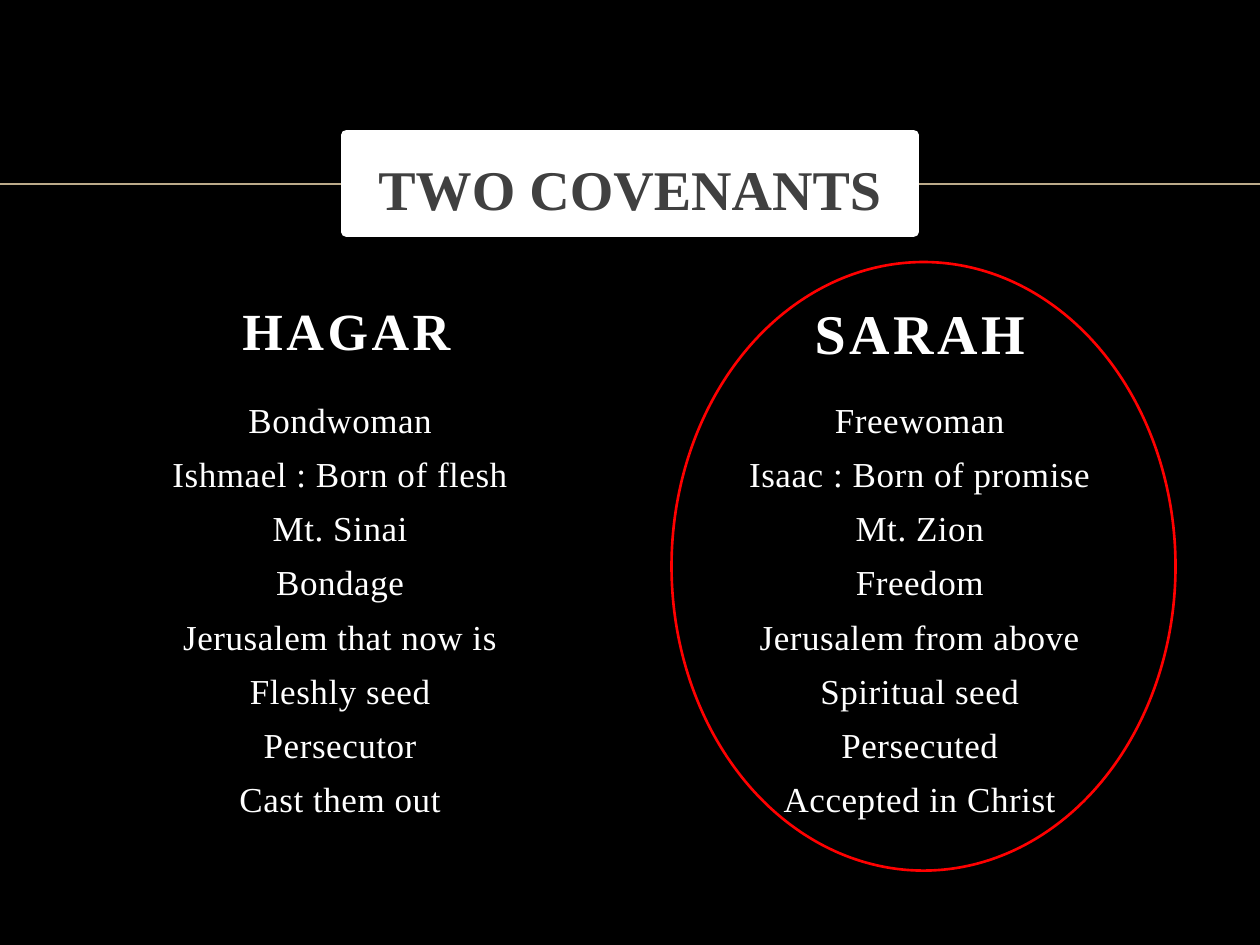
from pptx import Presentation
from pptx.dml.color import RGBColor
from pptx.enum.shapes import MSO_CONNECTOR as Conn, MSO_SHAPE as Shape
from pptx.enum.text import MSO_ANCHOR as Anchor, PP_ALIGN as Align
from pptx.oxml.ns import qn
from pptx.util import Inches, Pt
from lxml import etree

BLACK = RGBColor(0x00, 0x00, 0x00)
WHITE = RGBColor(0xFF, 0xFF, 0xFF)
GREY = RGBColor(0x40, 0x40, 0x40)
TAN = RGBColor(0xBB, 0xAA, 0x8A)
RED = RGBColor(0xFF, 0x00, 0x00)

HAGAR = ["Bondwoman", "Ishmael : Born of flesh", "Mt. Sinai", "Bondage",
         "Jerusalem that now is", "Fleshly seed", "Persecutor",
         "Cast them out"]
SARAH = ["Freewoman", "Isaac : Born of promise", "Mt. Zion", "Freedom",
         "Jerusalem from above", "Spiritual seed", "Persecuted",
         "Accepted in Christ"]


def write(frame, lines, size=20, color=WHITE, bold=False, track=0, gap=0,
          anchor=Anchor.TOP, inset=0.05):
    """Fill a frame with centred lines; track and gap are in points."""
    frame.word_wrap = True
    frame.vertical_anchor = anchor
    frame.margin_top = Inches(inset)
    for i, line in enumerate(lines):
        para = frame.paragraphs[0] if i == 0 else frame.add_paragraph()
        para.alignment = Align.CENTER
        if i:
            para.space_before = Pt(gap)
        run = para.add_run()
        run.text = line
        font = run.font
        font.name = "Times New Roman"
        font.size = Pt(size)
        font.bold = bold
        font.color.rgb = color
        if track:
            font._element.set("spc", str(round(track * 100)))


class Deck:
    """Holds the presentation style and the current slide."""

    def __init__(self, wide, high, back):
        self.prs = Presentation()
        self.prs.slide_width = Inches(wide)
        self.prs.slide_height = Inches(high)
        self.slide = self.prs.slides.add_slide(self.prs.slide_layouts[6])
        fill = self.slide.background.fill
        fill.solid()
        fill.fore_color.rgb = back

    def rule(self, x1, y1, x2, y2, color, width):
        ends = [Inches(v) for v in (x1, y1, x2, y2)]
        line = self.slide.shapes.add_connector(Conn.STRAIGHT, *ends)
        line.line.color.rgb = color
        line.line.width = Pt(width)
        etree.SubElement(line._element.spPr, qn("a:effectLst"))

    def text(self, box, lines, **style):
        area = self.slide.shapes.add_textbox(*[Inches(v) for v in box])
        write(area.text_frame, lines, **style)

    def shape(self, kind, box, edge, width, fill=None):
        form = self.slide.shapes.add_shape(kind, *[Inches(v) for v in box])
        form.shadow.inherit = False
        if fill is None:
            form.fill.background()
        else:
            form.fill.solid()
            form.fill.fore_color.rgb = fill
        form.line.color.rgb = edge
        form.line.width = Pt(width)
        return form


def main():
    deck = Deck(10, 7.5, BLACK)
    deck.rule(0, 1.46, 10, 1.46, TAN, 1)

    for left, lines in ((0.5, HAGAR), (5.1, SARAH)):
        deck.text((left, 3.11, 4.4, 3.48), lines, track=0.3, gap=7)

    head = dict(bold=True, track=2, anchor=Anchor.MIDDLE)
    deck.text((0.55, 2.25, 4.4, 0.73), ["HAGAR"], size=29.8, **head)
    deck.text((5.1, 2.25, 4.4, 0.77), ["SARAH"], size=32, **head)

    title = deck.shape(Shape.RECTANGLE, (2.75, 1.07, 4.5, 0.77), WHITE, 6,
                       fill=WHITE)
    write(title.text_frame, ["TWO COVENANTS"], size=32, color=GREY,
          bold=True, anchor=Anchor.MIDDLE, inset=0.12)
    deck.shape(Shape.OVAL, (5.33, 2.08, 4, 4.83), RED, 1.5)

    deck.prs.save("out.pptx")


if __name__ == "__main__":
    main()
